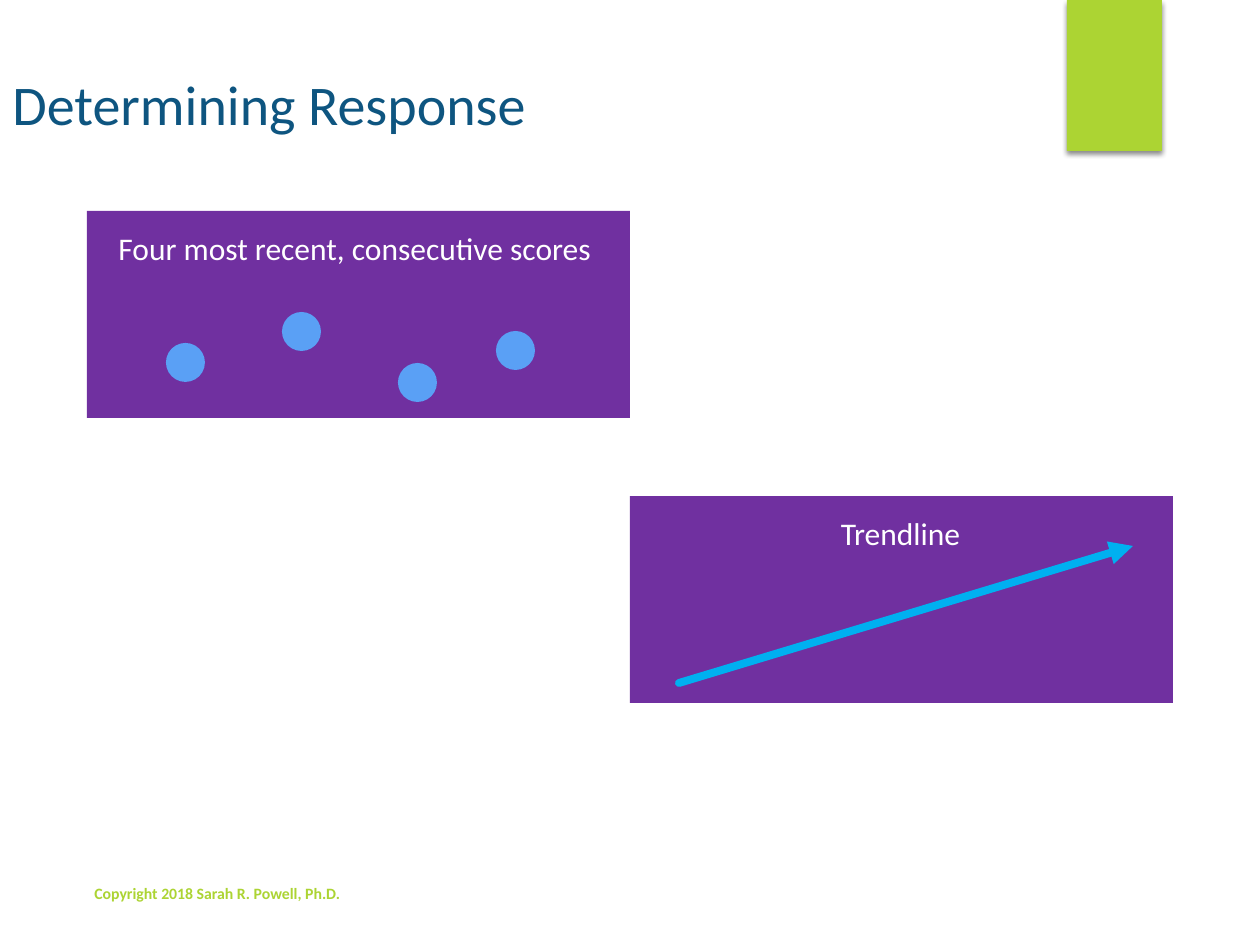
from dataclasses import dataclass

from lxml import etree
from pptx import Presentation
from pptx import util as u
from pptx.dml.color import RGBColor
from pptx.enum import shapes, text
from pptx.oxml import parse_xml
from pptx.oxml.ns import nsdecls, qn

EMU_PER_PX = 914400 / 126


@dataclass(frozen=True)
class Theme:
    font: str = "Calibri"
    title: str = "0E5580"
    accent: str = "ACD433"
    panel: str = "7030A0"
    dot: str = "5AA0F5"
    trend: str = "00B0F0"
    light: str = "FFFFFF"
    title_size: int = 32
    label_size: int = 18
    footer_size: int = 9
    trend_width: float = 4.5


THEME = Theme()


def px(*lengths):
    return [u.Emu(round(length * EMU_PER_PX)) for length in lengths]


def add_block(parent, kind, box, color):
    shape = parent.add_shape(kind, *px(*box))
    shape.shadow.inherit = False
    shape.fill.solid()
    shape.fill.fore_color.rgb = RGBColor.from_string(color)
    shape.line.fill.background()
    return shape


def add_label(parent, box, words, size, color, anchor=text.MSO_ANCHOR.TOP,
              align=text.PP_ALIGN.LEFT, bold=False, wrap=True):
    shape = parent.add_textbox(*px(*box))
    frame = shape.text_frame
    frame.text = words
    frame.word_wrap = wrap
    frame.vertical_anchor = anchor
    paragraph = frame.paragraphs[0]
    paragraph.alignment = align
    font = paragraph.runs[0].font
    font.name = THEME.font
    font.size = u.Pt(size)
    font.bold = bold
    font.color.rgb = RGBColor.from_string(color)


def add_drop_shadow(shape):
    effects = shape._element.spPr.find(qn("a:effectLst"))
    effects.append(parse_xml(
        f'<a:outerShdw {nsdecls("a")} blurRad="{u.Pt(3)}" dist="{u.Pt(2)}" '
        'dir="5400000" rotWithShape="0"><a:srgbClr val="000000">'
        '<a:alpha val="45000"/></a:srgbClr></a:outerShdw>'))


def add_arrow(parent, start, end):
    arrow = parent.add_connector(shapes.MSO_CONNECTOR.STRAIGHT, *px(*start, *end))
    arrow.line.color.rgb = RGBColor.from_string(THEME.trend)
    arrow.line.width = u.Pt(THEME.trend_width)
    outline = arrow.line._get_or_add_ln()
    outline.set("cap", "rnd")
    etree.SubElement(outline, qn("a:tailEnd"), type="triangle")
    etree.SubElement(arrow._element.spPr, qn("a:effectLst"))


def add_scores_panel(slide):
    group = slide.shapes.add_group_shape().shapes
    add_block(group, shapes.MSO_SHAPE.RECTANGLE, (87, 211, 543, 207), THEME.panel)
    for left, top in ((166, 343), (282, 312), (398, 363), (496, 331)):
        add_block(group, shapes.MSO_SHAPE.OVAL, (left, top, 39, 39), THEME.dot)
    add_label(group, (106, 223, 524, 50), "Four most recent, consecutive scores",
              THEME.label_size, THEME.light, wrap=False)


def add_trend_panel(slide):
    group = slide.shapes.add_group_shape().shapes
    add_block(group, shapes.MSO_SHAPE.RECTANGLE, (630, 496, 543, 207), THEME.panel)
    add_label(group, (649, 508, 503, 50), "Trendline", THEME.label_size,
              THEME.light, align=text.PP_ALIGN.CENTER)
    add_arrow(slide.shapes, (679, 683), (1133, 546))


def main():
    presentation = Presentation()
    presentation.slide_width, presentation.slide_height = px(1260, 945)
    slide = presentation.slides.add_slide(presentation.slide_layouts[6])
    tab = add_block(slide.shapes, shapes.MSO_SHAPE.RECTANGLE,
                    (1067, 0, 95, 151), THEME.accent)
    add_drop_shadow(tab)
    add_label(slide.shapes, (0, 54, 874, 98), "Determining Response",
              THEME.title_size, THEME.title, anchor=text.MSO_ANCHOR.MIDDLE)
    add_scores_panel(slide)
    add_trend_panel(slide)
    add_label(slide.shapes, (82, 877, 532, 32),
              "Copyright 2018 Sarah R. Powell, Ph.D.", THEME.footer_size,
              THEME.accent, anchor=text.MSO_ANCHOR.BOTTOM, bold=True)
    presentation.save("out.pptx")


if __name__ == "__main__":
    main()
